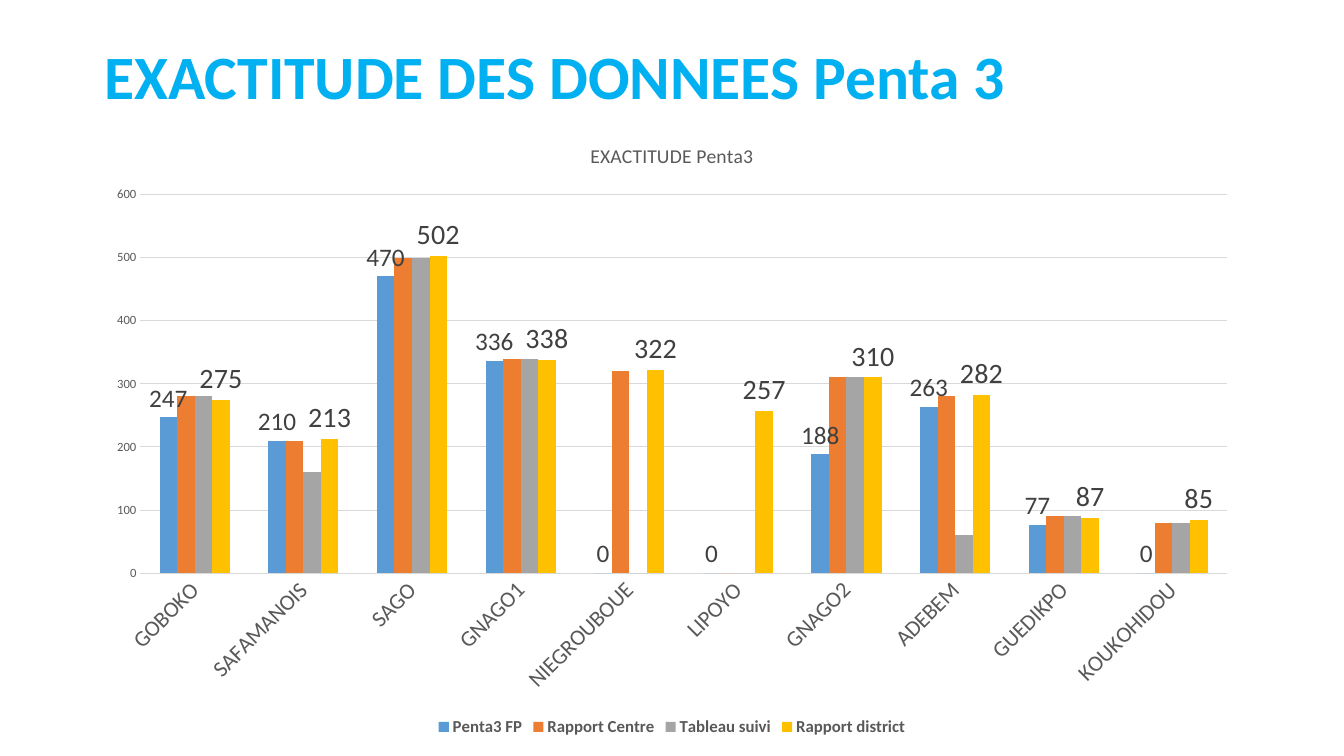
import pptx
import pptx.chart.data
import pptx.dml.color
import pptx.enum.chart
import pptx.enum.text
import pptx.util

RGBColor = pptx.dml.color.RGBColor
Pt = pptx.util.Pt

WIDTH, HEIGHT = pptx.util.Inches(13.33), pptx.util.Inches(7.5)
FONT = "Calibri"
SKY = RGBColor(0x00, 0xB0, 0xF0)
BLACK = RGBColor(0x00, 0x00, 0x00)
GREY = RGBColor(0x59, 0x59, 0x59)
DARK = RGBColor(0x40, 0x40, 0x40)
RULE = RGBColor(0xD9, 0xD9, 0xD9)
BLUE = RGBColor(0x5B, 0x9B, 0xD5)
ORANGE = RGBColor(0xED, 0x7D, 0x31)
SILVER = RGBColor(0xA5, 0xA5, 0xA5)
GOLD = RGBColor(0xFF, 0xC0, 0x00)

CENTRES = ["GOBOKO", "SAFAMANOIS", "SAGO", "GNAGO1", "NIEGROUBOUE",
           "LIPOYO", "GNAGO2", "ADEBEM", "GUEDIKPO", "KOUKOHIDOU"]
SERIES = [
    ("Penta3 FP", BLUE, 18, [247, 210, 470, 336, 0, 0, 188, 263, 77, 0]),
    ("Rapport Centre", ORANGE, None, [280, 210, 500, 340, 320, 0, 310, 280, 90, 80]),
    ("Tableau suivi", SILVER, None, [280, 160, 500, 340, 0, 0, 310, 60, 90, 80]),
    ("Rapport district", GOLD, 20, [275, 213, 502, 338, 322, 257, 310, 282, 87, 85]),
]


def box(left, top, width, height):
    """Turn shares of the slide's size into lengths."""
    return [round(share * side) for share, side in
            zip((left, top, width, height), (WIDTH, HEIGHT, WIDTH, HEIGHT))]


def set_font(font, size, color, bold=False):
    """Give a font its face, size, colour and weight."""
    font.name = FONT
    font.size = Pt(size)
    font.bold = bold
    font.color.rgb = color


def set_line(line, color):
    """Draw a thin rule in the given colour."""
    line.color.rgb = color
    line.width = Pt(0.75)


def add_title(slide, text, place):
    """Fill and place the slide's title placeholder."""
    sp = slide.shapes.title
    sp.left, sp.top, sp.width, sp.height = place
    tf = sp.text_frame
    tf.text = text
    tf.vertical_anchor = pptx.enum.text.MSO_ANCHOR.MIDDLE
    p = tf.paragraphs[0]
    p.alignment = pptx.enum.text.PP_ALIGN.LEFT
    p.line_spacing = 0.9
    set_font(p.runs[0].font, 44, SKY, bold=True)


def add_columns(slide, place):
    """Add the clustered columns and return their chart."""
    data = pptx.chart.data.CategoryChartData()
    data.categories = CENTRES
    for name, _, _, values in SERIES:
        data.add_series(name, values)
    kind = pptx.enum.chart.XL_CHART_TYPE.COLUMN_CLUSTERED
    chart = slide.shapes.add_chart(kind, *place, data).chart
    set_font(chart.font, 10, BLACK)
    plot = chart.plots[0]
    plot.gap_width = 219
    plot.overlap = 0
    plot.vary_by_categories = False
    for series, (_, color, label_size, _) in zip(plot.series, SERIES):
        series.format.fill.solid()
        series.format.fill.fore_color.rgb = color
        series.invert_if_negative = False
        if label_size:
            labels = series.data_labels
            labels.show_value = True
            labels.position = pptx.enum.chart.XL_LABEL_POSITION.OUTSIDE_END
            set_font(labels.font, label_size, DARK)
    return chart


def style_axes(chart):
    """Format the axes, gridlines and slanted category names."""
    for axis, size in ((chart.category_axis, 16), (chart.value_axis, 9)):
        axis.major_tick_mark = pptx.enum.chart.XL_TICK_MARK.NONE
        axis.minor_tick_mark = pptx.enum.chart.XL_TICK_MARK.NONE
        set_font(axis.tick_labels.font, size, GREY)
    names, scale = chart.category_axis, chart.value_axis
    set_line(names.format.line, RULE)
    body = names._element.txPr.find(pptx.oxml.ns.qn("a:bodyPr"))
    body.set("rot", str(-45 * 60000))
    body.set("vert", "horz")
    scale.format.line.fill.background()
    scale.minimum_scale, scale.maximum_scale, scale.major_unit = 0, 600, 100
    set_line(scale.major_gridlines.format.line, RULE)


def add_captions(chart, text):
    """Give the chart its title and bottom legend."""
    chart.has_title = True
    tf = chart.chart_title.text_frame
    tf.text = text
    set_font(tf.paragraphs[0].runs[0].font, 14, GREY)
    chart.chart_title.include_in_layout = False
    chart.has_legend = True
    chart.legend.position = pptx.enum.chart.XL_LEGEND_POSITION.BOTTOM
    chart.legend.include_in_layout = False
    set_font(chart.legend.font, 12, GREY, bold=True)


def main():
    """Build the slide and save it."""
    prs = pptx.Presentation()
    prs.slide_width, prs.slide_height = WIDTH, HEIGHT
    slide = prs.slides.add_slide(prs.slide_layouts[5])
    add_title(slide, "EXACTITUDE DES DONNEES Penta 3", box(0.07, 0.05, 0.86, 0.11))
    chart = add_columns(slide, box(0.07, 0.16, 0.86, 0.82))
    style_axes(chart)
    add_captions(chart, "EXACTITUDE Penta3")
    prs.save("out.pptx")


if __name__ == "__main__":
    main()
